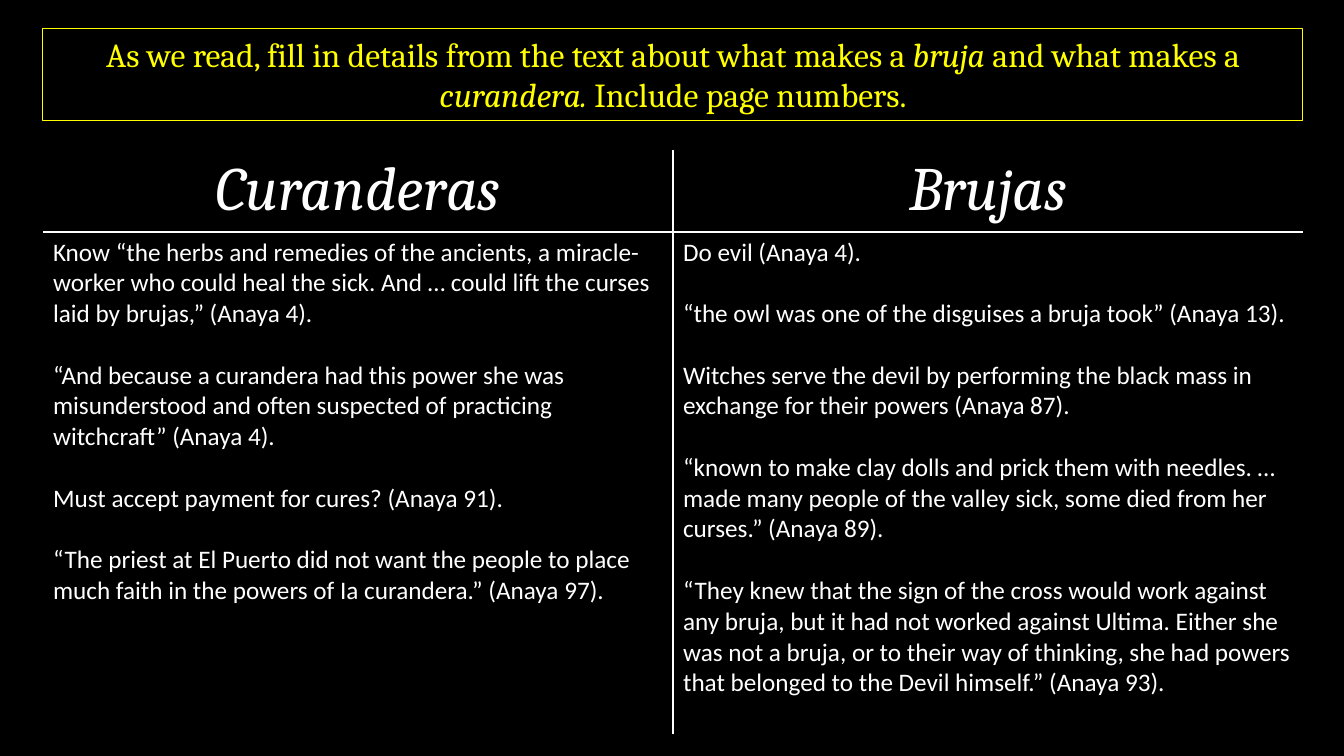
"""Build a two-column reading slide comparing curanderas and brujas."""
from dataclasses import dataclass

from lxml import etree
from pptx import Presentation
from pptx.dml.color import RGBColor
from pptx.enum import text
from pptx.oxml import ns
from pptx.slide import Slide
from pptx.table import _Cell
from pptx.util import Emu, Pt

BLACK = RGBColor(0x00, 0x00, 0x00)
WHITE = RGBColor(0xFF, 0xFF, 0xFF)
YELLOW = RGBColor(0xFF, 0xFF, 0x00)
SERIF, SANS = "Cambria", "Calibri"
EMU_PER_PX = 914400 / 100.8
LEFT, WIDTH = 43, 1260
TABLE_TOP, HEADING_HEIGHT, DETAILS_HEIGHT = 150, 82, 502


@dataclass(frozen=True)
class Phrase:
    """A stretch of the instruction, upright or italic."""
    words: str
    italic: bool = False


@dataclass(frozen=True)
class Column:
    """A heading with its details and the side of its inner border."""
    heading: str
    details: tuple[str, ...]
    inner_side: str


INSTRUCTION = (
    Phrase("As we read, fill in details from the text about what makes a "),
    Phrase("bruja", italic=True),
    Phrase(" and what makes a "),
    Phrase("curandera. ", italic=True),
    Phrase("Include page numbers."),
)
COLUMNS = (
    Column("Curanderas", (
        "Know “the herbs and remedies of the ancients, a miracle-worker who could "
        "heal the sick. And … could lift the curses laid by brujas,” (Anaya 4).",
        "“And because a curandera had this power she was misunderstood and often "
        "suspected of practicing witchcraft” (Anaya 4).",
        "Must accept payment for cures? (Anaya 91).",
        "“The priest at El Puerto did not want the people to place much faith in "
        "the powers of Ia curandera.” (Anaya 97).",
    ), "R"),
    Column("Brujas", (
        "Do evil (Anaya 4).",
        "“the owl was one of the disguises a bruja took” (Anaya 13).",
        "Witches serve the devil by performing the black mass in exchange for "
        "their powers (Anaya 87).",
        "“known to make clay dolls and prick them with needles. … made many people "
        "of the valley sick, some died from her curses.” (Anaya 89).",
        "“They knew that the sign of the cross would work against any bruja, but it "
        "had not worked against Ultima. Either she was not a bruja, or to their way "
        "of thinking, she had powers that belonged to the Devil himself.” (Anaya 93).",
    ), "L"),
)


def px(length: int) -> Emu:
    """Turn pixels into EMU."""
    return Emu(round(length * EMU_PER_PX))


def set_borders(cell: _Cell, visible: str) -> None:
    """Clear the cell's fill and draw white borders on the visible sides."""
    cell.fill.background()
    properties = cell._tc.get_or_add_tcPr()
    for position, side in enumerate("LRTB"):
        border = etree.Element(ns.qn(f"a:ln{side}"), w=str(Pt(1)))
        if side in visible:
            fill = etree.SubElement(border, ns.qn("a:solidFill"))
            etree.SubElement(fill, ns.qn("a:srgbClr"), val=str(WHITE))
        else:
            etree.SubElement(border, ns.qn("a:noFill"))
        properties.insert(position, border)


def write_cell(cell: _Cell, lines: tuple[str, ...], font_name: str, size: int,
               heading: bool = False) -> None:
    """Write white paragraphs separated by one line of space."""
    cell.text = "\n".join(lines)
    for index, paragraph in enumerate(cell.text_frame.paragraphs):
        paragraph.alignment = text.PP_ALIGN.CENTER if heading else text.PP_ALIGN.LEFT
        paragraph.space_before = Pt(22 if index else 0)
        paragraph.font.name = font_name
        paragraph.font.size = Pt(size)
        paragraph.font.italic = heading
        paragraph.font.color.rgb = WHITE


def add_comparison(slide: Slide) -> None:
    """Add the table of headings and details."""
    table = slide.shapes.add_table(
        2, len(COLUMNS), px(LEFT), px(TABLE_TOP), px(WIDTH),
        px(HEADING_HEIGHT + DETAILS_HEIGHT)).table
    table.first_row = table.horz_banding = False
    for row, height in zip(table.rows, (HEADING_HEIGHT, DETAILS_HEIGHT)):
        row.height = px(height)
    for index, column in enumerate(COLUMNS):
        heading, details = table.cell(0, index), table.cell(1, index)
        write_cell(heading, (column.heading,), SERIF, 44, heading=True)
        write_cell(details, column.details, SANS, 18)
        set_borders(heading, column.inner_side + "B")
        set_borders(details, column.inner_side + "T")


def add_instruction(slide: Slide) -> None:
    """Add the framed instruction above the table."""
    instruction = slide.shapes.add_textbox(px(LEFT), px(29), px(WIDTH), px(92))
    instruction.line.color.rgb = YELLOW
    instruction.line.width = Pt(0.75)
    frame = instruction.text_frame
    frame.word_wrap = True
    frame.auto_size = text.MSO_AUTO_SIZE.SHAPE_TO_FIT_TEXT
    paragraph = frame.paragraphs[0]
    paragraph.alignment = text.PP_ALIGN.CENTER
    paragraph.font.name = SERIF
    paragraph.font.size = Pt(24)
    paragraph.font.color.rgb = YELLOW
    for phrase in INSTRUCTION:
        run = paragraph.add_run()
        run.text = phrase.words
        run.font.italic = phrase.italic


def main() -> None:
    """Build and save the slide."""
    presentation = Presentation()
    presentation.slide_width, presentation.slide_height = px(1344), px(756)
    slide = presentation.slides.add_slide(presentation.slide_layouts[6])
    slide.background.fill.solid()
    slide.background.fill.fore_color.rgb = BLACK
    add_comparison(slide)
    add_instruction(slide)
    presentation.save("out.pptx")


if __name__ == "__main__":
    main()
